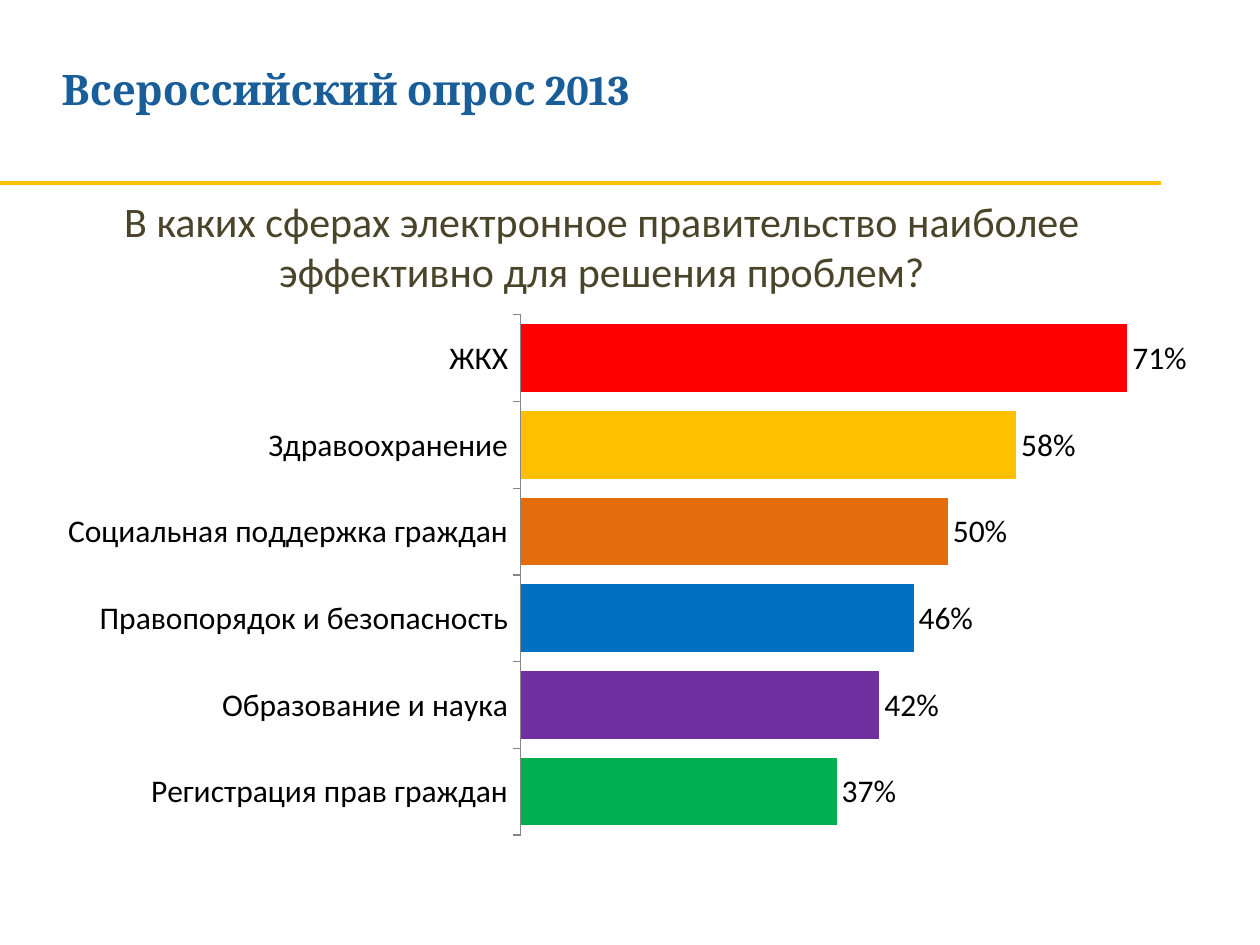
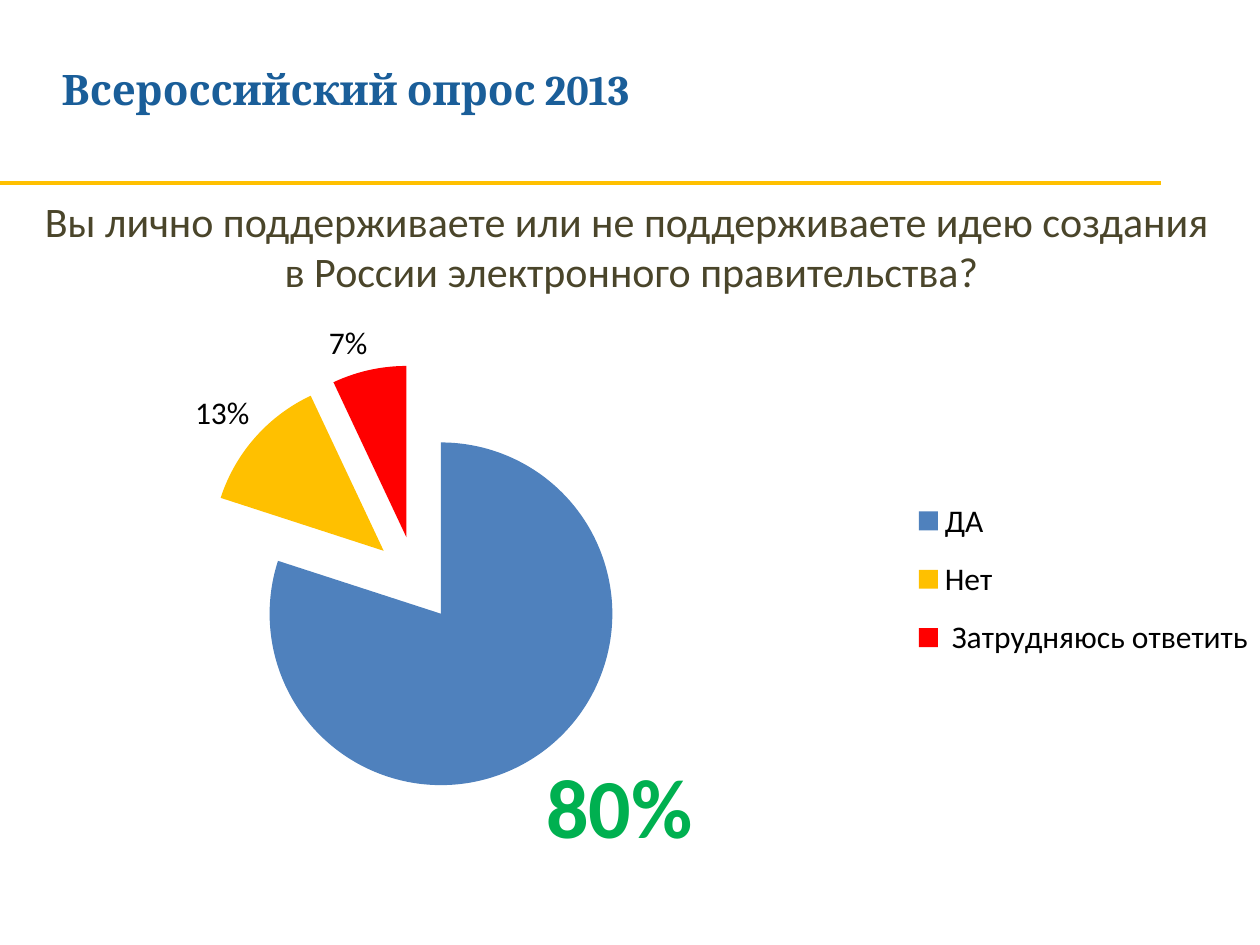
import pptx
import pptx.chart.data
import pptx.dml.color
import pptx.enum.chart
import pptx.enum.shapes
import pptx.enum.text
import pptx.oxml.ns
import pptx.util
from lxml import etree

PX = 914400 / 126
TITLE_BLUE, QUESTION_BROWN = "1A5E99", "4A452A"
GOLD, RED, GREEN, BLACK, AXIS_GREY = "FFC000", "FF0000", "00B050", "000000", "868686"
HEADING_FONT, BODY_FONT = "Cambria", "Calibri"
ALIGN = pptx.enum.text.PP_ALIGN
CHART = pptx.enum.chart


def px(length):
    return pptx.util.Emu(round(length * PX))


def color(hex_code):
    return pptx.dml.color.RGBColor.from_string(hex_code)


def style_font(font, name=BODY_FONT, size=18, hex_code=BLACK, bold=False):
    font.name, font.size, font.bold = name, pptx.util.Pt(size), bold
    font.color.rgb = color(hex_code)


def write(shape, text, align=ALIGN.LEFT, **style):
    frame = shape.text_frame
    frame.word_wrap = True
    frame.auto_size = pptx.enum.text.MSO_AUTO_SIZE.SHAPE_TO_FIT_TEXT
    frame.vertical_anchor = pptx.enum.text.MSO_ANCHOR.TOP
    paragraph = frame.paragraphs[0]
    paragraph.text, paragraph.alignment = text, align
    for run in paragraph.runs:
        style_font(run.font, **style)


def add_child(parent, tag, **attributes):
    child = etree.SubElement(parent, pptx.oxml.ns.qn(tag))
    for key, value in attributes.items():
        child.set(key, str(value))
    return child


def place(holder, x, y, w, h, inner=False):
    """Fix a chart part at fractions of the chart's size."""
    for old in holder.findall(pptx.oxml.ns.qn("c:layout")):
        holder.remove(old)
    layout = add_child(holder, "c:layout")
    manual = add_child(layout, "c:manualLayout")
    if inner:
        add_child(manual, "c:layoutTarget", val="inner")
    for side in "xy":
        add_child(manual, f"c:{side}Mode", val="edge")
    for side, value in zip("xywh", (x, y, w, h)):
        add_child(manual, f"c:{side}", val=value)
    position = holder.find(pptx.oxml.ns.qn("c:legendPos"))
    if position is None:
        holder.insert(0, layout)
    else:
        position.addnext(layout)


class SurveyDeck:
    def __init__(self):
        self.presentation = pptx.Presentation()
        self.presentation.slide_width = px(1260)
        self.presentation.slide_height = px(945)
        self.slide = None

    def start_slide(self, question, question_width):
        self.slide = self.presentation.slides.add_slide(self.presentation.slide_layouts[5])
        self.rule(0, 183, 1161)
        self.title("Всероссийский опрос 2013")
        self.question(question, question_width)

    def rule(self, left, top, right):
        line = self.slide.shapes.add_connector(
            pptx.enum.shapes.MSO_CONNECTOR.STRAIGHT, px(left), px(top), px(right), px(top))
        line.line.color.rgb = color(GOLD)
        line.line.width = pptx.util.Pt(2.5)
        add_child(line._element.spPr, "a:effectLst")

    def title(self, text):
        heading = self.slide.shapes.title
        heading.left, heading.top, heading.width, heading.height = map(px, (49, 57, 1153, 63))
        write(heading, text, name=HEADING_FONT, size=24, hex_code=TITLE_BLUE, bold=True)

    def question(self, text, width):
        box = self.slide.shapes.add_textbox(px(3), px(189), px(width), px(115))
        write(box, text, align=ALIGN.CENTER, size=24, hex_code=QUESTION_BROWN)

    def chart(self, kind, answers, bounds, plot_area, number_format):
        """Draw one series; answers are (name, value, colour)."""
        names, values, colors = zip(*answers)
        data = pptx.chart.data.CategoryChartData(number_format=number_format)
        data.categories = names
        data.add_series("Series 1", values)
        chart = self.slide.shapes.add_chart(kind, *map(px, bounds), data).chart
        style_font(chart.font)
        chart.has_title = chart.has_legend = False
        place(chart._chartSpace.chart.plotArea, *plot_area, inner=True)
        series = chart.plots[0].series[0]
        for index, hex_code in enumerate(colors):
            fill = series.points[index].format.fill
            fill.solid()
            fill.fore_color.rgb = color(hex_code)
        labels = series.data_labels
        style_font(labels.font)
        labels.number_format, labels.number_format_is_linked = "0%", False
        labels.position = CHART.XL_LABEL_POSITION.OUTSIDE_END
        return chart, series

    def bar_chart(self, answers, bounds, plot_area):
        chart, series = self.chart(
            CHART.XL_CHART_TYPE.BAR_CLUSTERED, answers, bounds, plot_area, "0%")
        plot = chart.plots[0]
        plot.vary_by_categories = False
        plot.gap_width, plot.overlap = 28, 46
        series.data_labels.show_value = True
        shares = chart.value_axis
        shares.visible = shares.has_major_gridlines = False
        shares.minimum_scale, shares.maximum_scale = 0, 0.8
        spheres = chart.category_axis
        spheres.major_tick_mark = CHART.XL_TICK_MARK.OUTSIDE
        spheres.format.line.color.rgb = color(AXIS_GREY)

    def pie_chart(self, answers, bounds, plot_area, legend_area, explosion):
        chart, series = self.chart(
            CHART.XL_CHART_TYPE.PIE, answers, bounds, plot_area, "General")
        chart.plots[0].vary_by_categories = True
        series.data_labels.show_percentage = True
        series.data_labels.show_value = False
        # Pull the slices apart
        exploded = add_child(series._element, "c:explosion", val=explosion)
        series._element.find(pptx.oxml.ns.qn("c:tx")).addnext(exploded)
        # Emphasise the share of the first answer
        main_share = series.points[0].data_label
        style_font(main_share.font, size=48, hex_code=GREEN, bold=True)
        main_share.position = CHART.XL_LABEL_POSITION.OUTSIDE_END
        for tag, shown in (("showVal", "0"), ("showPercent", "1")):
            series._element.xpath(f"c:dLbls/c:dLbl/c:{tag}")[0].set("val", shown)
        # Legend
        chart.has_legend = True
        chart.legend.position = CHART.XL_LEGEND_POSITION.RIGHT
        chart.legend.include_in_layout = False
        style_font(chart.legend.font)
        place(chart.legend._element, *legend_area)


def main():
    deck = SurveyDeck()

    # Spheres where e-government helps most, listed from the bottom bar up
    deck.start_slide(
        "В каких сферах электронное правительство наиболее эффективно для решения проблем?", 1198)
    spheres = [
        ("Регистрация прав граждан", 0.37, GREEN),
        ("Образование и наука", 0.42, "7030A0"),
        ("Правопорядок и безопасность", 0.46, "0070C0"),
        ("Социальная поддержка граждан", 0.5, "E46C0A"),
        ("Здравоохранение", 0.58, GOLD),
        ("ЖКХ", 0.71, RED),
    ]
    deck.bar_chart(spheres, (49, 304, 1179, 542), (0.4, 0.02, 0.58, 0.96))

    # Support for the idea
    deck.start_slide(
        "Вы лично поддерживаете или не поддерживаете идею создания \v"
        "в России электронного правительства?", 1257)
    support = [("ДА", 80, "4F81BD"), ("Нет", 13, GOLD), (" Затрудняюсь ответить", 7, RED)]
    deck.pie_chart(support, (0, 304, 1260, 592), (0.16, 0.1, 0.34, 0.73),
                   (0.72, 0.3, 0.28, 0.33), explosion=25)

    deck.presentation.save("out.pptx")


if __name__ == "__main__":
    main()
